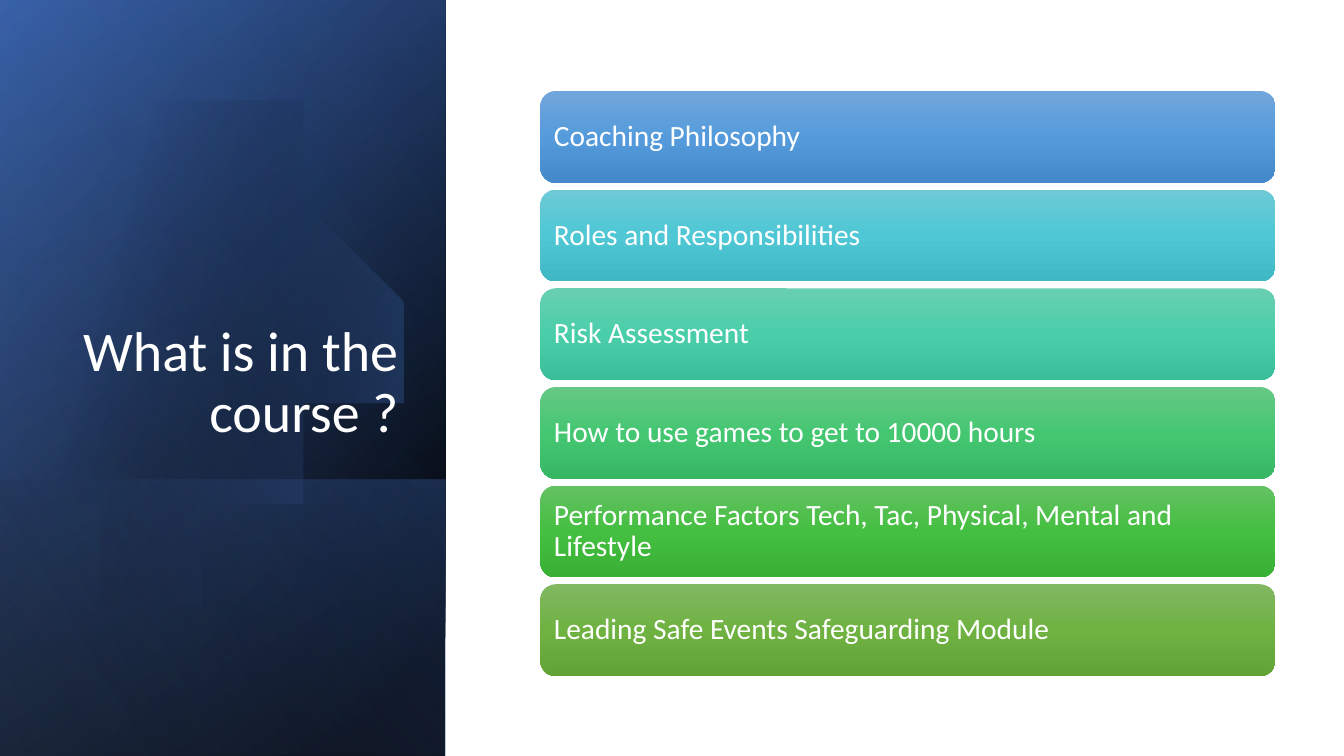
from dataclasses import dataclass

from lxml import etree
from pptx import Presentation
from pptx import util as u
from pptx.dml.color import RGBColor
from pptx.enum import shapes, text
from pptx.oxml.ns import qn

SLIDE_W, SLIDE_H = u.Inches(13.33), u.Inches(7.5)
COLUMNS = ROWS = 100
FONT = "Calibri"
COLOURS = {
    "black": "000000", "navy": "2F5597", "blue": "4472C4", "pale": "8FAADC", "white": "FFFFFF",
}


@dataclass(frozen=True)
class Stop:
    position: int
    colour: str
    opacity: int = 100


@dataclass(frozen=True)
class Layer:
    """A gradient layer of the side panel, from a top row down to the slide's foot."""
    top: float
    stops: tuple[Stop, ...]
    angle: int


@dataclass(frozen=True)
class Topic:
    label: str
    shades: tuple[str, str, str]


def col(count: float) -> int:
    return round(SLIDE_W * count / COLUMNS)


def row(count: float) -> int:
    return round(SLIDE_H * count / ROWS)


PANEL_COLUMNS = 33.15
BAR_LEFT, BAR_TOP, BAR_WIDTH, BAR_HEIGHT, BAR_PITCH = 40.21, 12.03, 54.69, 12.15, 13.05

LOWER_LAYERS = (
    Layer(0, (Stop(8, COLOURS["black"]), Stop(100, COLOURS["navy"])), 50),
    Layer(0, (Stop(0, COLOURS["black"], 0), Stop(99, COLOURS["blue"], 46)), 30),
    Layer(63.47, (Stop(2, COLOURS["blue"], 29), Stop(100, COLOURS["black"], 30)), 130),
)
TOP_LAYER = Layer(0, (Stop(0, COLOURS["black"], 0), Stop(99, COLOURS["pale"], 11)), 120)

# Disc outline in inches: a start point, then cubic curves (two controls and an end)
DISC_START = (1.49, 1.1)
DISC_CURVES = (
    ((2.46, 1.12), (3.35, 1.77), (3.63, 2.75)),
    ((3.98, 3.97), (3.28, 5.23), (2.07, 5.58)),
    ((1.31, 5.8), (0.53, 5.61), (0, 5.14)),
)
DISC_CLOSING = (
    ((0.23, 1.42), (0.5, 1.28), (0.8, 1.19)),
    ((1.03, 1.13), (1.26, 1.1), DISC_START),
)
DISC_EDGE = (0, 1.61)
DISC_STOPS = (Stop(29, COLOURS["black"], 0), Stop(100, COLOURS["blue"], 43))

TOPICS = (
    Topic("Coaching Philosophy", ("71A6DB", "559BDB", "448ACA")),
    Topic("Roles and Responsibilities", ("6DCAD5", "4FC7D5", "3FB7C4")),
    Topic("Risk Assessment", ("69CFB1", "4ACEAA", "3BBE9A")),
    Topic("How to use games to get to 10000 hours", ("66C885", "45C772", "37B764")),
    Topic("Performance Factors Tech, Tac, Physical, Mental and Lifestyle",
          ("64C162", "44BF41", "37B034")),
    Topic("Leading Safe Events Safeguarding Module", ("81B861", "6FB242", "62A336")),
)


def apply(target, values: dict) -> None:
    for name, value in values.items():
        setattr(target, name, value)


def paint(shape, stops: tuple[Stop, ...], angle: float) -> None:
    """Give a shape a linear gradient, with no line and no shadow."""
    shape.shadow.inherit = False
    shape.line.fill.background()
    shape.fill.gradient()
    shape.fill.gradient_angle = 360 - angle
    stop_list = shape._element.spPr.find(qn("a:gradFill")).find(qn("a:gsLst"))
    for old in list(stop_list):
        stop_list.remove(old)
    for stop in stops:
        entry = etree.SubElement(stop_list, qn("a:gs"), pos=str(stop.position * 1000))
        colour = etree.SubElement(entry, qn("a:srgbClr"), val=stop.colour)
        if stop.opacity < 100:
            etree.SubElement(colour, qn("a:alpha"), val=str(stop.opacity * 1000))


def write(frame, words: str, size: int, frame_format: dict, paragraph_format: dict) -> None:
    apply(frame, {"word_wrap": True, "auto_size": text.MSO_AUTO_SIZE.NONE, **frame_format})
    paragraph = frame.paragraphs[0]
    apply(paragraph, {"line_spacing": 0.9, **paragraph_format})
    run = paragraph.add_run()
    run.text = words
    apply(run.font, {"name": FONT, "size": u.Pt(size)})
    run.font.color.rgb = RGBColor.from_string(COLOURS["white"])


def add_layer(slide, layer: Layer) -> None:
    # The rectangle is turned a quarter, so its frame swaps width and height
    width, height = col(PANEL_COLUMNS), row(ROWS - layer.top)
    left = (width - height) // 2
    top = row(layer.top) + (height - width) // 2
    panel = slide.shapes.add_shape(shapes.MSO_SHAPE.RECTANGLE, left, top, height, width)
    panel.rotation = 90
    panel._element.spPr.find(qn("a:xfrm")).set("flipH", "1")
    paint(panel, layer.stops, layer.angle)


def curve_points(start: tuple, curves: tuple, steps: int = 24) -> list[tuple[float, float]]:
    points = []
    for first, second, end in curves:
        for step in range(1, steps + 1):
            t = step / steps
            weights = ((1 - t) ** 3, 3 * t * (1 - t) ** 2, 3 * t * t * (1 - t), t ** 3)
            knots = (start, first, second, end)
            points.append(tuple(sum(w * knot[axis] for w, knot in zip(weights, knots))
                                for axis in (0, 1)))
        start = end
    return points


def add_disc(slide) -> None:
    outline = slide.shapes.build_freeform(*DISC_START, scale=u.Inches(1))
    outline.add_line_segments(
        curve_points(DISC_START, DISC_CURVES) + [DISC_EDGE]
        + curve_points(DISC_EDGE, DISC_CLOSING))
    paint(outline.convert_to_shape(), DISC_STOPS, 14)


def add_title(slide) -> None:
    title = slide.shapes.title
    apply(title, {"left": col(4.8), "top": row(24.53), "width": col(25.58), "height": row(34.93)})
    write(title.text_frame, "What is in the course ?", 40,
          {"vertical_anchor": text.MSO_ANCHOR.BOTTOM}, {"alignment": text.PP_ALIGN.RIGHT})
    slide.shapes._spTree.append(title._element)  # bring in front of the panel


def add_topic(slide, index: int, topic: Topic) -> None:
    bar = slide.shapes.add_shape(
        shapes.MSO_SHAPE.ROUNDED_RECTANGLE, col(BAR_LEFT), row(BAR_TOP + index * BAR_PITCH),
        col(BAR_WIDTH), row(BAR_HEIGHT))
    paint(bar, tuple(Stop(i * 50, shade) for i, shade in enumerate(topic.shades)), 90)
    sides = ("margin_left", "margin_top", "margin_right", "margin_bottom")
    write(bar.text_frame, topic.label, 21,
          {"vertical_anchor": text.MSO_ANCHOR.MIDDLE, **dict.fromkeys(sides, u.Inches(0.09))},
          {"alignment": text.PP_ALIGN.LEFT})


def main() -> None:
    deck = Presentation()
    apply(deck, {"slide_width": SLIDE_W, "slide_height": SLIDE_H})
    slide = deck.slides.add_slide(deck.slide_layouts.get_by_name("Title Only"))

    # Side panel
    for layer in LOWER_LAYERS:
        add_layer(slide, layer)
    add_disc(slide)
    add_layer(slide, TOP_LAYER)
    add_title(slide)

    # Course topics
    for index, topic in enumerate(TOPICS):
        add_topic(slide, index, topic)

    deck.save("out.pptx")


if __name__ == "__main__":
    main()
